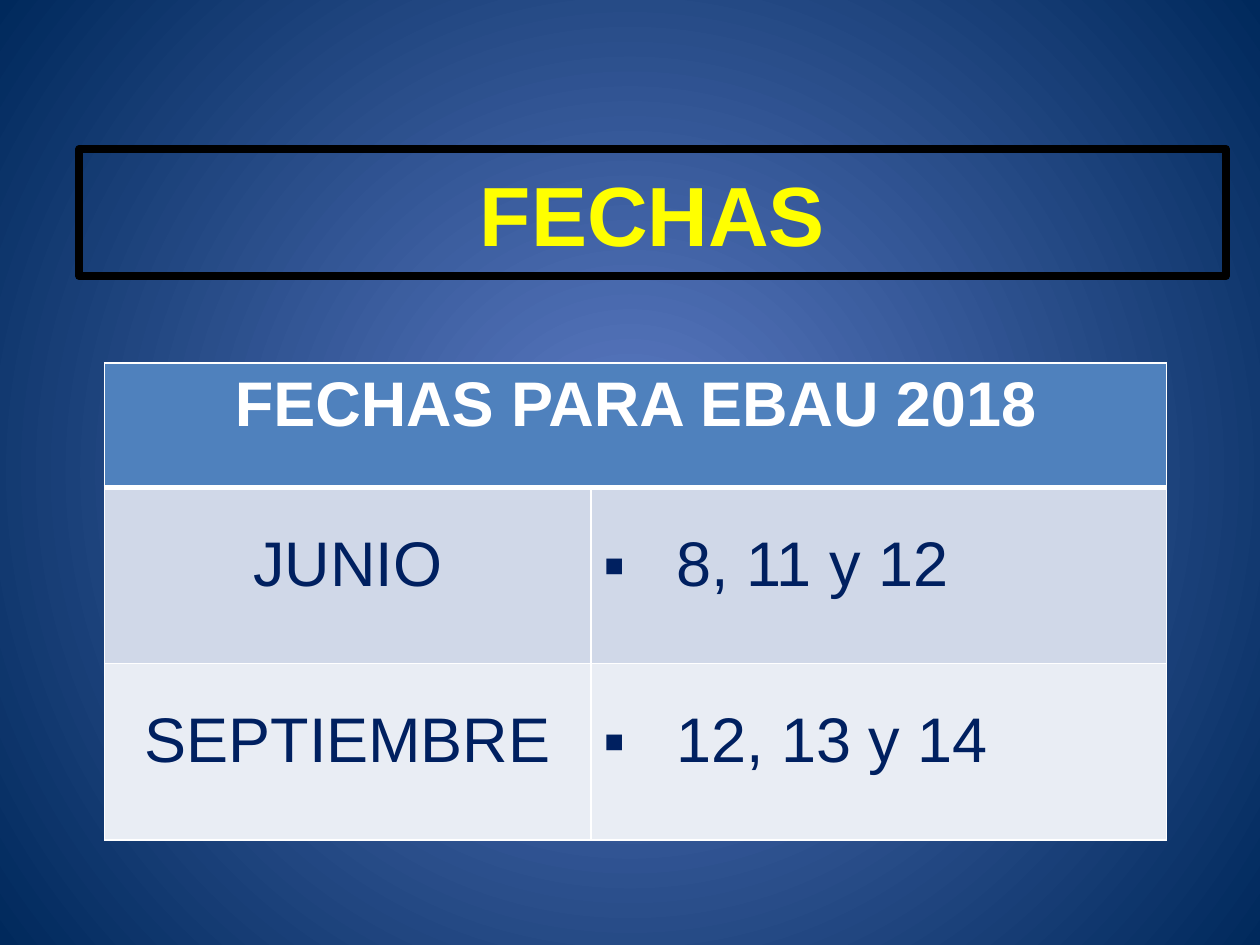
from dataclasses import dataclass

from lxml import etree
from pptx import Presentation
from pptx.dml.color import RGBColor
from pptx.enum.text import MSO_ANCHOR, MSO_AUTO_SIZE, PP_ALIGN
from pptx.oxml.ns import qn
from pptx.util import Cm, Pt

CENTER, LEFT = PP_ALIGN.CENTER, PP_ALIGN.LEFT
MIDDLE = MSO_ANCHOR.MIDDLE
NO_AUTOFIT = MSO_AUTO_SIZE.NONE
TITLE_ONLY = 5


@dataclass(frozen=True)
class Theme:
    font: str = "Arial"
    title_size: int = 48
    table_size: int = 36
    glow: str = "5E7CC5"
    night: str = "00295C"
    title: str = "FFFF00"
    frame: str = "000000"
    header: str = "4F81BD"
    header_text: str = "FFFFFF"
    body_text: str = "002060"
    border: str = "FFFFFF"
    bands: tuple[str, str] = ("D0D8E8", "E9EDF4")


@dataclass(frozen=True)
class ExamDates:
    month: str
    days: str


THEME = Theme()
EXAMS = [ExamDates("JUNIO", "8, 11 y 12"), ExamDates("SEPTIEMBRE", "12, 13 y 14")]
COLUMN_WIDTHS = (Cm(9.8), Cm(11.61))
HEADER_HEIGHT, ROW_HEIGHT = Cm(2.51), Cm(3.55)
THIN, THICK = Pt(1), Pt(3)


def paint_background(page) -> None:
    """Fill the page with a radial gradient, lightest at the centre."""
    fill = page.background.fill
    fill.gradient()
    for stop, position, color in zip(fill.gradient_stops, (0, 1), (THEME.glow, THEME.night)):
        stop.position = position
        stop.color.rgb = RGBColor.from_string(color)
    gradient = page.background._cSld.find(".//" + qn("a:gradFill"))
    gradient.remove(gradient.find(qn("a:lin")))
    circle = etree.SubElement(gradient, qn("a:path"), path="circle")
    etree.SubElement(circle, qn("a:fillToRect"), l="50000", t="50000", r="50000", b="50000")


def write(para, text: str, size: int, color: str, bold: bool, align) -> None:
    para.text = text
    para.alignment = align
    for span in para.runs:
        span.font.name = THEME.font
        span.font.size = Pt(size)
        span.font.bold = bold
        span.font.color.rgb = RGBColor.from_string(color)


def add_title(page, text: str) -> None:
    box = page.shapes.title
    box.left, box.top, box.width, box.height = Cm(1.6), Cm(3), Cm(23.11), Cm(2.57)
    outline = etree.Element(qn("a:prstGeom"), prst="flowChartAlternateProcess")
    etree.SubElement(outline, qn("a:avLst"))
    box._element.spPr.insert(1, outline)
    box.fill.background()
    box.line.color.rgb = RGBColor.from_string(THEME.frame)
    box.line.width = Pt(4.5)
    frame = box.text_frame
    frame.word_wrap = True
    frame.auto_size = NO_AUTOFIT
    frame.vertical_anchor = MIDDLE
    write(frame.paragraphs[0], text, THEME.title_size, THEME.title, True, CENTER)


def style_cell(cell, fill: str, top: int = THIN, bottom: int = THIN) -> None:
    cell.fill.solid()
    cell.fill.fore_color.rgb = RGBColor.from_string(fill)
    properties = cell._tc.get_or_add_tcPr()
    widths = {"a:lnL": THIN, "a:lnR": THIN, "a:lnT": top, "a:lnB": bottom}
    for index, (side, width) in enumerate(widths.items()):
        line = etree.Element(qn(side), w=str(int(width)))
        solid = etree.SubElement(line, qn("a:solidFill"))
        etree.SubElement(solid, qn("a:srgbClr"), val=THEME.border)
        properties.insert(index, line)


def add_bullet(para) -> None:
    properties = para._p.get_or_add_pPr()
    indent = int(Cm(1.47))
    properties.set("marL", str(indent))
    properties.set("indent", str(-indent))
    etree.SubElement(properties, qn("a:buFont"), typeface=THEME.font)
    etree.SubElement(properties, qn("a:buChar"), char="▪")


def add_dates_table(page, heading: str, exams: list[ExamDates]) -> None:
    height = HEADER_HEIGHT + ROW_HEIGHT * len(exams)
    table = page.shapes.add_table(len(exams) + 1, len(COLUMN_WIDTHS), Cm(2.11), Cm(7.32),
                                  sum(COLUMN_WIDTHS), height).table
    table.first_row = table.horz_banding = False
    for column, width in zip(table.columns, COLUMN_WIDTHS):
        column.width = width
    for index, row in enumerate(table.rows):
        row.height = ROW_HEIGHT if index else HEADER_HEIGHT

    header = table.cell(0, 0)
    header.merge(table.cell(0, len(COLUMN_WIDTHS) - 1))
    for cell in table.rows[0].cells:
        style_cell(cell, THEME.header, bottom=THICK)
    write(header.text_frame.paragraphs[0], heading, THEME.table_size,
          THEME.header_text, True, CENTER)

    for index, exam in enumerate(exams):
        month, days = table.rows[index + 1].cells
        for cell, text, align in ((month, exam.month, CENTER), (days, exam.days, LEFT)):
            style_cell(cell, THEME.bands[index % 2], top=THIN if index else THICK)
            para = cell.text_frame.paragraphs[0]
            write(para, text, THEME.table_size, THEME.body_text, False, align)
            para.line_spacing = 1.5
        add_bullet(days.text_frame.paragraphs[0])


def main() -> None:
    deck = Presentation()
    deck.slide_width, deck.slide_height = Cm(25.4), Cm(19.05)
    page = deck.slides.add_slide(deck.slide_layouts[TITLE_ONLY])
    paint_background(page)
    add_title(page, "FECHAS")
    add_dates_table(page, "FECHAS PARA EBAU 2018", EXAMS)
    deck.save("out.pptx")


if __name__ == "__main__":
    main()
